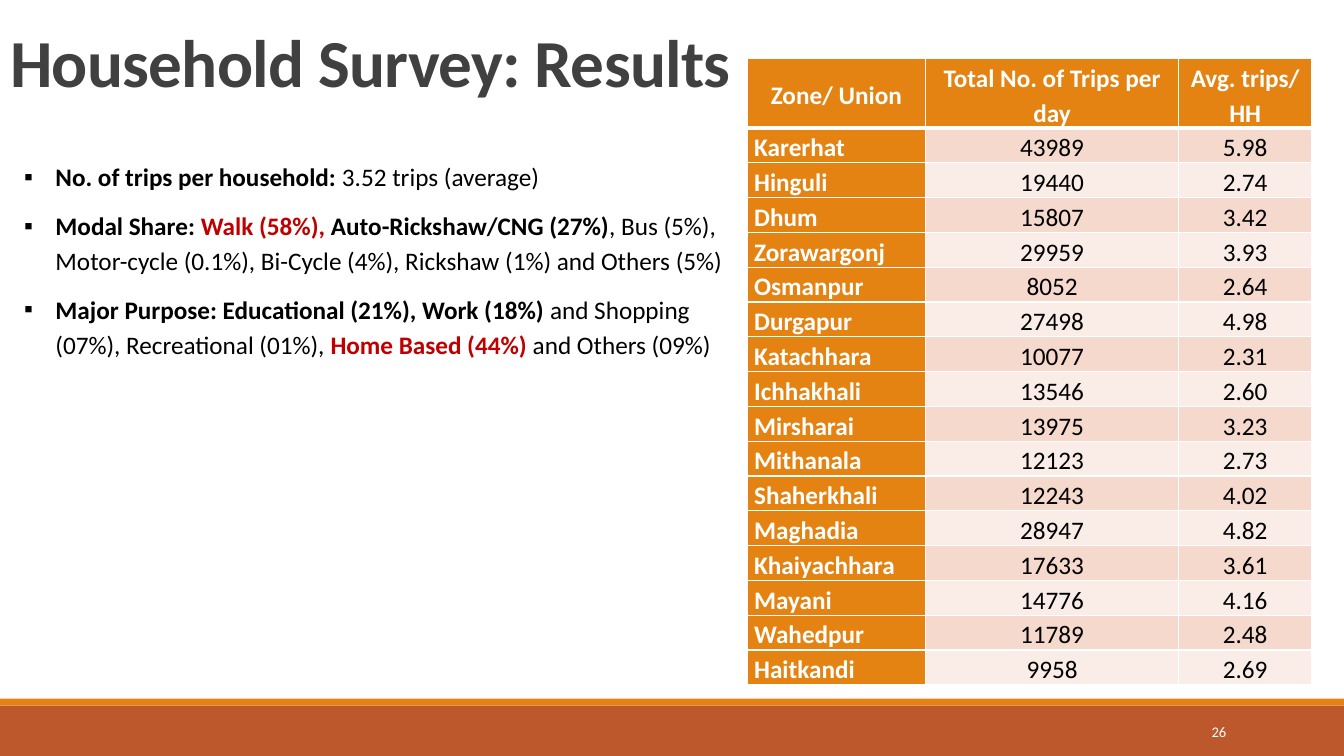
from dataclasses import dataclass

from pptx import Presentation
from pptx.dml.color import RGBColor
from pptx.enum.shapes import MSO_SHAPE
from pptx.enum.text import MSO_ANCHOR, MSO_AUTO_SIZE, PP_ALIGN
from pptx.oxml.ns import qn
from pptx.util import Inches, Pt
from lxml import etree

RECT = MSO_SHAPE.RECTANGLE
MIDDLE, BOTTOM = MSO_ANCHOR.MIDDLE, MSO_ANCHOR.BOTTOM
LEFT, CENTER, RIGHT = PP_ALIGN.LEFT, PP_ALIGN.CENTER, PP_ALIGN.RIGHT
GROW, FIXED = MSO_AUTO_SIZE.SHAPE_TO_FIT_TEXT, MSO_AUTO_SIZE.NONE

# The slide is a grid of 100 columns by 100 rows
WIDTH, HEIGHT = Inches(13.33), Inches(7.5)


@dataclass(frozen=True)
class Theme:
    font: str = "Calibri"
    head: float = 48
    text: float = 18
    small: float = 10.5
    orange: str = "E48312"
    rust: str = "BD582C"
    gray: str = "404040"
    black: str = "000000"
    white: str = "FFFFFF"
    red: str = "C00000"
    bands: tuple = ("F5D9CC", "FAEDE7")


THEME = Theme()

# Each point is a list of (text, format) runs
BOLD = {"bold": True}
ALERT = {"bold": True, "color": THEME.red}
POINTS = [
    [("No. of trips per household: ", BOLD), ("3.52 trips (average)", {})],
    [("Modal Share: ", BOLD), ("Walk (58%), ", ALERT),
     ("Auto-Rickshaw/CNG (27%)", BOLD),
     (", Bus (5%), Motor-cycle (0.1%), Bi-Cycle (4%), "
      "Rickshaw (1%) and Others (5%)", {})],
    [("Major Purpose: Educational (21%), Work (18%) ", BOLD),
     ("and Shopping (07%), Recreational (01%), ", {}),
     ("Home Based (44%) ", ALERT), ("and Others (09%)", {})],
]

HEADS = ("Zone/ Union", "Total No. of Trips per day", "Avg. trips/ HH")
ZONES = [
    ("Karerhat", "43989", "5.98"),
    ("Hinguli", "19440", "2.74"),
    ("Dhum", "15807", "3.42"),
    ("Zorawargonj", "29959", "3.93"),
    ("Osmanpur", "8052", "2.64"),
    ("Durgapur", "27498", "4.98"),
    ("Katachhara", "10077", "2.31"),
    ("Ichhakhali", "13546", "2.60"),
    ("Mirsharai", "13975", "3.23"),
    ("Mithanala", "12123", "2.73"),
    ("Shaherkhali", "12243", "4.02"),
    ("Maghadia", "28947", "4.82"),
    ("Khaiyachhara", "17633", "3.61"),
    ("Mayani", "14776", "4.16"),
    ("Wahedpur", "11789", "2.48"),
    ("Haitkandi", "9958", "2.69"),
]


def cols(count):
    return round(WIDTH * count / 100)


def rows(count):
    return round(HEIGHT * count / 100)


def area(left, top, width, height):
    return cols(left), rows(top), cols(width), rows(height)


def move(shape, box):
    shape.left, shape.top, shape.width, shape.height = box


def paint(item, color):
    item.fill.solid()
    item.fill.fore_color.rgb = RGBColor.from_string(color)


def write(para, text, size=THEME.text, color=THEME.black, bold=False,
          align=LEFT, track=None):
    para.alignment = align
    run = para.add_run()
    run.text = text
    font = run.font
    font.name, font.size, font.bold = THEME.font, Pt(size), bold
    font.color.rgb = RGBColor.from_string(color)
    if track is not None:
        run._r.get_or_add_rPr().set("spc", str(round(track * 100)))


def add_bar(slide, box, color):
    bar = slide.shapes.add_shape(RECT, *box)
    bar.shadow.inherit = False
    paint(bar, color)
    bar.line.fill.background()


def add_title(slide, text):
    title = slide.shapes.title
    move(title, area(0, 0, 100, 14))
    frame = title.text_frame
    frame.auto_size = FIXED
    frame.vertical_anchor = BOTTOM
    write(frame.paragraphs[0], text, size=THEME.head, color=THEME.gray,
          bold=True, track=-0.5)


def add_mark(para):
    props = para._p.get_or_add_pPr()
    props.set("marL", str(Inches(0.31)))
    props.set("indent", str(-Inches(0.31)))
    etree.SubElement(props, qn("a:buFont")).set("typeface", "Arial")
    etree.SubElement(props, qn("a:buChar")).set("char", "▪")


def add_list(slide, points):
    body = slide.placeholders[1]
    move(body, area(1.05, 20.13, 54.69, 28.27))
    frame = body.text_frame
    frame.auto_size = GROW
    for index, point in enumerate(points):
        para = frame.add_paragraph() if index else frame.paragraphs[0]
        para.line_spacing = 1.15
        para.space_before, para.space_after = Pt(0), Pt(10)
        add_mark(para)
        for text, style in point:
            write(para, text, **style)


def add_edge(cell, side, width):
    line = etree.SubElement(cell._tc.get_or_add_tcPr(), qn("a:ln" + side))
    line.set("w", str(Pt(width)))
    fill = etree.SubElement(line, qn("a:solidFill"))
    etree.SubElement(fill, qn("a:srgbClr")).set("val", THEME.white)


def fill_cell(cell, text, row, col):
    head, label = row == 0, row == 0 or col == 0
    cell.margin_left = cell.margin_right = Inches(0.07)
    cell.margin_top = cell.margin_bottom = 0
    cell.vertical_anchor = MIDDLE
    # The rule under the header row is thicker
    for side, width in (("L", 1), ("R", 1), ("T", 3 if row == 1 else 1),
                        ("B", 3 if head else 1)):
        add_edge(cell, side, width)
    paint(cell, THEME.orange if label else THEME.bands[(row - 1) % 2])
    para = cell.text_frame.paragraphs[0]
    para.line_spacing = 1.15
    write(para, text, bold=label, color=THEME.white if label else THEME.black,
          align=CENTER if head or col else LEFT)


def add_grid(slide, lines):
    box = area(55.59, 7.73, 42, 82.8)
    grid = slide.shapes.add_table(len(lines), len(HEADS), *box).table
    grid.first_row = grid.horz_banding = False
    for col, width in zip(grid.columns, (13.28, 18.83, 9.9)):
        col.width = cols(width)
    for row, line in enumerate(lines):
        grid.rows[row].height = rows(4.6 if row else 9.2)
        for col, text in enumerate(line):
            fill_cell(grid.cell(row, col), text, row, col)


def add_page(slide, text):
    box = slide.shapes.add_textbox(*area(81.25, 94.13, 10.73, 5.33))
    frame = box.text_frame
    frame.word_wrap = True
    frame.vertical_anchor = MIDDLE
    write(frame.paragraphs[0], text, size=THEME.small, color=THEME.white,
          align=RIGHT)


def main():
    deck = Presentation()
    deck.slide_width, deck.slide_height = WIDTH, HEIGHT
    slide = deck.slides.add_slide(deck.slide_layouts[1])

    # Footer
    add_bar(slide, area(0, 93.33, 100, 6.67), THEME.rust)
    add_bar(slide, area(0, 92.4, 100, 0.93), THEME.orange)
    add_page(slide, "26")

    # Content
    add_title(slide, "Household Survey: Results")
    add_list(slide, POINTS)
    add_grid(slide, [HEADS, *ZONES])

    deck.save("out.pptx")


if __name__ == "__main__":
    main()
